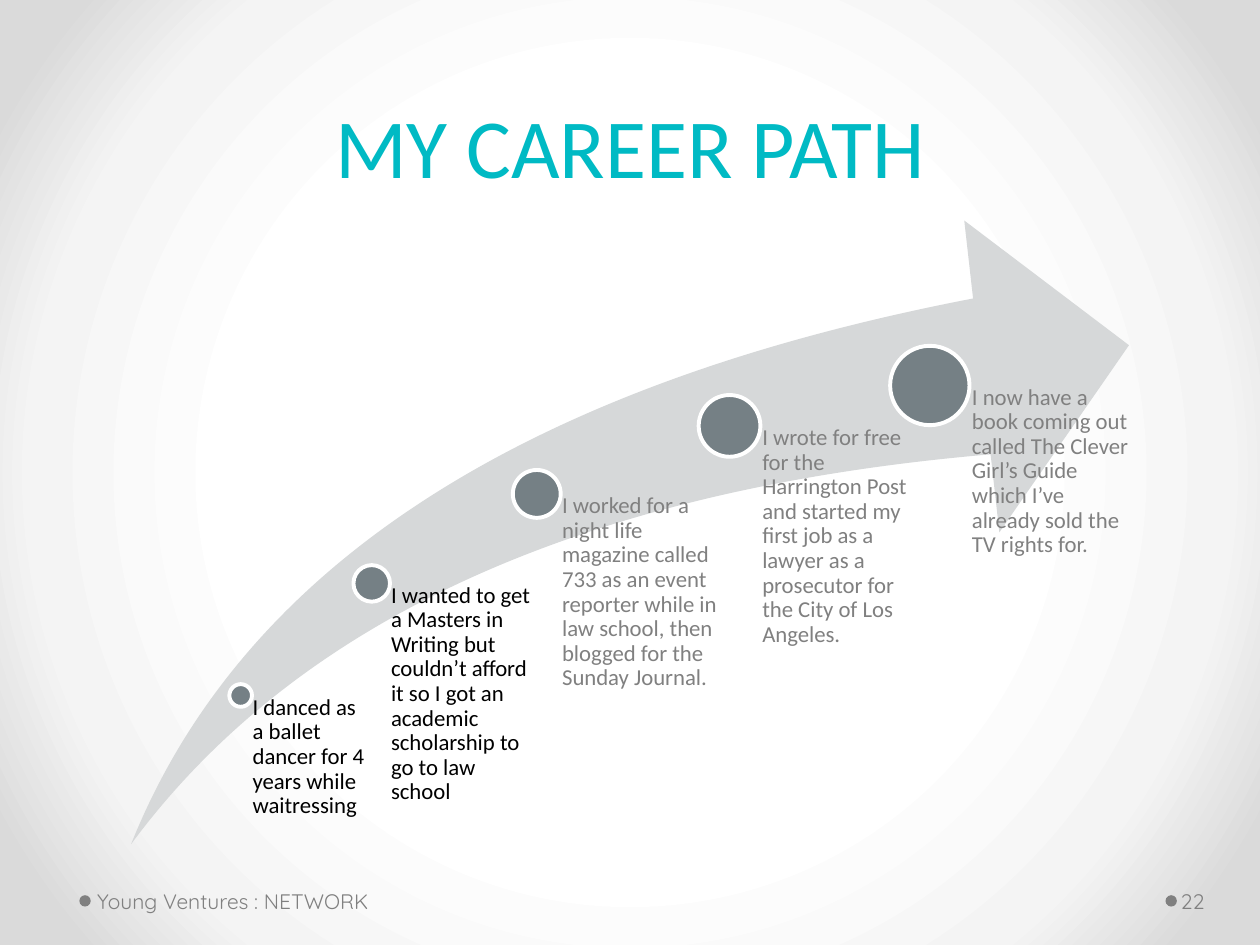
from dataclasses import dataclass

from lxml.etree import SubElement
from pptx import Presentation
from pptx.dml.color import RGBColor
from pptx.enum.shapes import MSO_SHAPE as Shape
from pptx.enum.text import MSO_ANCHOR as Anchor, PP_ALIGN as Align
from pptx.oxml.ns import qn
from pptx.util import Inches, Pt


@dataclass(frozen=True)
class Theme:
    title: str = "00BAC4"
    arrow: str = "D6D8D9"
    dot: str = "758085"
    dot_line: str = "FFFFFF"
    strong: str = "000000"
    muted: str = "808080"
    backdrop: tuple = ((50, "FFFFFF"), (76, "F4F4F4"), (92, "DADADA"))
    body_font: str = "Calibri"
    footer_font: str = "Quicksand"
    title_size: int = 48
    body_size: int = 13
    footer_size: int = 12


THEME = Theme()

# Dot centre within the arrow box, dot diameter, text width, colour, text
MILESTONES = [
    (0.87, 3.77, 0.18, 1.04, THEME.strong,
     "I danced as a ballet dancer for 4 years while waitressing"),
    (1.91, 2.88, 0.29, 1.31, THEME.strong,
     "I wanted to get a Masters in Writing but couldn’t afford it so I got "
     "an academic scholarship to go to law school"),
    (3.22, 2.17, 0.38, 1.53, THEME.muted,
     "I worked for a night life magazine called 733 as an event reporter "
     "while in law school, then blogged for the Sunday Journal."),
    (4.75, 1.63, 0.49, 1.58, THEME.muted,
     "I wrote for free for the Harrington Post and started my first job as "
     "a lawyer as a prosecutor for the City of Los Angeles."),
    (6.34, 1.31, 0.63, 1.58, THEME.muted,
     "I now have a book coming out called The Clever Girl’s Guide which "
     "I’ve already sold the TV rights for."),
]


def paint_background(slide):
    """Radial gradient, light in the middle."""
    fill = slide.background.fill
    fill.gradient()
    gradient = slide.background._cSld.find(".//" + qn("a:gradFill"))
    for child in list(gradient):
        gradient.remove(child)
    stops = SubElement(gradient, qn("a:gsLst"))
    for position, color in THEME.backdrop:
        stop = SubElement(stops, qn("a:gs"), pos=str(position * 1000))
        SubElement(stop, qn("a:srgbClr"), val=color)
    radial = SubElement(gradient, qn("a:path"), path="circle")
    SubElement(radial, qn("a:fillToRect"),
               {side: "50000" for side in "ltrb"})


def add_solid(shapes, kind, box, color, line=None):
    shape = shapes.add_shape(kind, *map(Inches, box))
    shape.shadow.inherit = False
    shape.fill.solid()
    shape.fill.fore_color.rgb = RGBColor.from_string(color)
    if line:
        shape.line.color.rgb = RGBColor.from_string(line)
        shape.line.width = Pt(2.25)
    else:
        shape.line.fill.background()
    return shape


def add_text(shapes, box, text, font, size, color, insets, anchor=Anchor.TOP):
    """Text box with one paragraph; insets are left, top, right, bottom."""
    frame = shapes.add_textbox(*map(Inches, box)).text_frame
    frame.word_wrap = True
    frame.vertical_anchor = anchor
    (frame.margin_left, frame.margin_top,
     frame.margin_right, frame.margin_bottom) = map(Inches, insets)
    paragraph = frame.paragraphs[0]
    paragraph.text = text
    paragraph.font.name = font
    paragraph.font.size = Pt(size)
    paragraph.font.color.rgb = RGBColor.from_string(color)
    return paragraph


def add_title(slide, box, text):
    paragraph = add_text(slide.shapes, box, text, THEME.body_font,
                         THEME.title_size, THEME.title,
                         (0.1, 0.05, 0.1, 0.05), Anchor.BOTTOM)
    paragraph.alignment = Align.CENTER
    paragraph.line_spacing = Pt(58)


def add_career_arrow(slide, box):
    """Rising arrow with growing dots; each text starts at its dot's centre."""
    left, top, _, height = box
    shapes = slide.shapes.add_group_shape().shapes
    arrow = add_solid(shapes, Shape.SWOOSH_ARROW, box, THEME.arrow)
    arrow.adjustments[0] = arrow.adjustments[1] = 0.25
    for x, y, size, width, color, text in MILESTONES:
        add_solid(shapes, Shape.OVAL,
                  (left + x - size / 2, top + y - size / 2, size, size),
                  THEME.dot, THEME.dot_line)
        paragraph = add_text(shapes, (left + x, top + y, width, height - y),
                             text, THEME.body_font, THEME.body_size, color,
                             (size * 0.53, 0, 0, 0))
        paragraph.line_spacing = 0.9


def add_footer_item(slide, box, text, insets):
    """Footer text with a small dot before it."""
    left, top, _, height = box
    dot = 0.09
    add_solid(slide.shapes, Shape.OVAL,
              (left - dot, top + (height - dot) / 2, dot, dot), THEME.muted)
    add_text(slide.shapes, box, text, THEME.footer_font, THEME.footer_size,
             THEME.muted, insets, Anchor.MIDDLE)


def main():
    presentation = Presentation()
    presentation.slide_width = Inches(10)
    presentation.slide_height = Inches(7.5)
    slide = presentation.slides.add_slide(presentation.slide_layouts[6])

    paint_background(slide)
    add_title(slide, (0.5, 0.15, 9, 1.45), "MY CAREER PATH")
    add_career_arrow(slide, (1.04, 1.75, 7.92, 4.95))
    add_footer_item(slide, (0.72, 6.95, 3.11, 0.4),
                    "Young Ventures : NETWORK", (0.05, 0.05, 0.1, 0.05))
    add_footer_item(slide, (9.34, 6.95, 0.61, 0.4),
                    "22", (0.03, 0.05, 0.05, 0.05))

    presentation.save("out.pptx")


if __name__ == "__main__":
    main()
